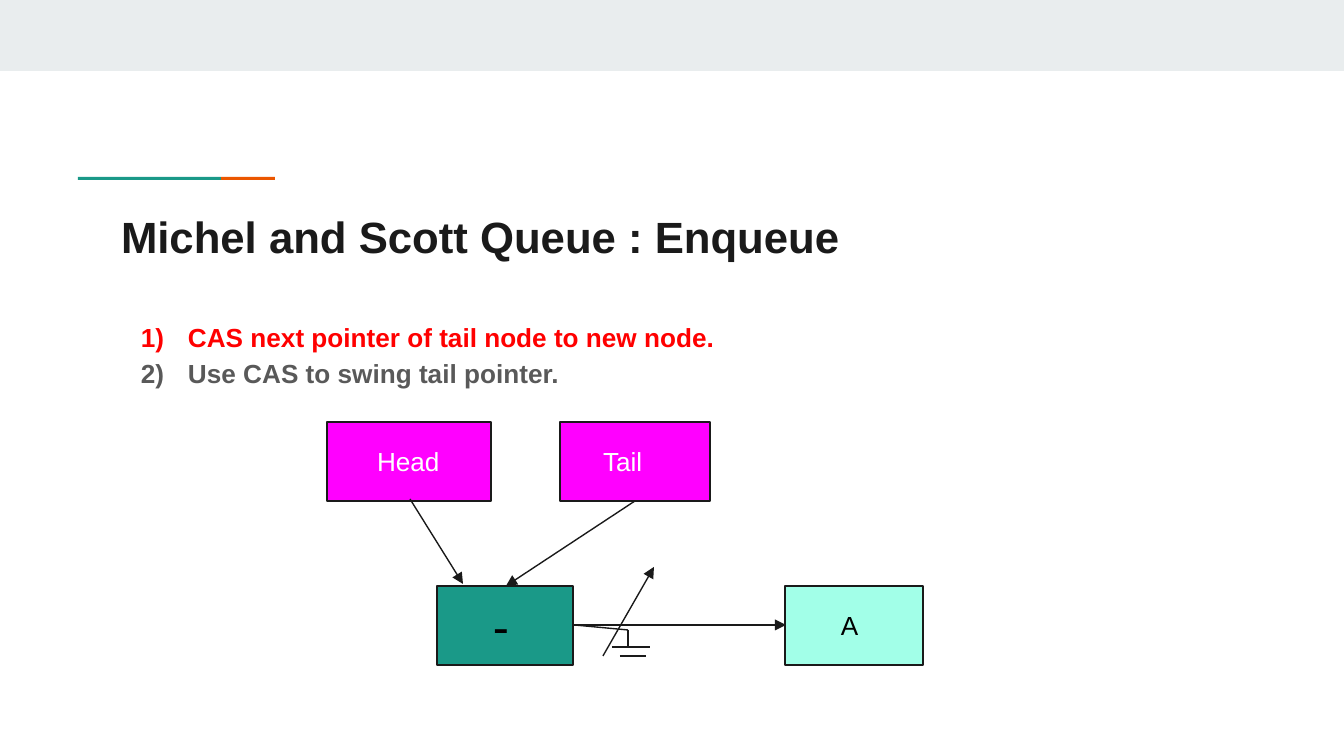
import pptx
import pptx.dml.color
import pptx.enum.shapes
import pptx.enum.text
import pptx.oxml
import pptx.oxml.ns
import pptx.util
from lxml import etree

PX = 914400 / 134.4
FONT = "Arial"
INK, TEAL, ORANGE, MAGENTA = "1A1A1A", "1A9988", "EB5600", "FF00FF"
INSET = 13
NODE_H = 79
POINTER_Y, NODE_Y = 422, 586


def px(n):
    return round(n * PX)


def color(hex_value):
    return pptx.dml.color.RGBColor.from_string(hex_value)


def sub(parent, tag, **attrs):
    return etree.SubElement(parent, pptx.oxml.ns.qn(tag), attrs)


def set_font(p, size, hex_value, bold=False):
    p.font.name = FONT
    p.font.size = pptx.util.Pt(size)
    p.font.bold = bold
    p.font.color.rgb = color(hex_value)


def set_frame(tf, anchor, left=INSET):
    tf.word_wrap = True
    tf.auto_size = pptx.enum.text.MSO_AUTO_SIZE.NONE
    tf.vertical_anchor = anchor
    tf.margin_left = px(left)
    tf.margin_top = tf.margin_right = tf.margin_bottom = px(INSET)


def add_rect(s, x, y, w, h, fill, line=None):
    sp = s.shapes.add_shape(pptx.enum.shapes.MSO_SHAPE.RECTANGLE,
                            px(x), px(y), px(w), px(h))
    sp.shadow.inherit = False
    sp.fill.solid()
    sp.fill.fore_color.rgb = color(fill)
    if line:
        sp.line.color.rgb = color(line)
        sp.line.width = pptx.util.Pt(0.75)
    else:
        sp.line.fill.background()
    return sp


def add_node(s, text, x, y, w, fill, text_color, indent, size=14):
    tf = add_rect(s, x, y, w, NODE_H, fill, INK).text_frame
    set_frame(tf, pptx.enum.text.MSO_ANCHOR.MIDDLE, indent)
    p = tf.paragraphs[0]
    p.text = text
    p.alignment = pptx.enum.text.PP_ALIGN.LEFT
    set_font(p, size, text_color)


def add_line(s, x1, y1, x2, y2, arrow=False):
    cn = s.shapes.add_connector(pptx.enum.shapes.MSO_CONNECTOR.STRAIGHT,
                                px(x1), px(y1), px(x2), px(y2))
    cn.line.color.rgb = color(INK)
    cn.line.width = pptx.util.Pt(0.75)
    if arrow:
        sub(cn.line._get_or_add_ln(), "a:tailEnd", type="triangle")
    sub(cn._element.spPr, "a:effectLst")


def set_title(s, text):
    sp = s.shapes.title
    sp.left, sp.top, sp.width, sp.height = px(108), px(197), px(1130), px(79)
    set_frame(sp.text_frame, pptx.enum.text.MSO_ANCHOR.MIDDLE)
    p = sp.text_frame.paragraphs[0]
    p.text = text
    p.alignment = pptx.enum.text.PP_ALIGN.LEFT
    set_font(p, 23.4, INK, bold=True)


def add_steps(s, steps):
    tf = s.shapes.add_textbox(px(108), px(304), px(1130), px(406)).text_frame
    set_frame(tf, pptx.enum.text.MSO_ANCHOR.TOP)
    for i, (text, hex_value) in enumerate(steps):
        p = tf.add_paragraph() if i else tf.paragraphs[0]
        p.text = text
        p.line_spacing = 1.15
        # Numbering with a hanging indent
        pPr = p._p.get_or_add_pPr()
        pPr.set("marL", str(px(67)))
        pPr.set("indent", str(px(-47)))
        sub(sub(pPr, "a:buClr"), "a:srgbClr", val=hex_value)
        sub(pPr, "a:buAutoNum", type="arabicParenR")
        set_font(p, 14, hex_value, bold=True)


def main():
    prs = pptx.Presentation()
    prs.slide_width, prs.slide_height = px(1344), px(756)
    s = prs.slides.add_slide(prs.slide_layouts[5])

    # Top band and accent rule
    add_rect(s, 0, 0, 1344, 71, "E9EDEE")
    add_rect(s, 78, 177, 143, 3, TEAL)
    add_rect(s, 221, 177, 54, 3, ORANGE)

    # Title and steps
    set_title(s, "Michel and Scott Queue : Enqueue")
    add_steps(s, [("CAS next pointer of tail node to new node.", "FF0000"),
                  ("Use CAS to swing tail pointer.", "595959")])

    # Queue pointers and nodes
    add_node(s, "Head", 327, POINTER_Y, 164, MAGENTA, "FFFFFF", 50)
    add_node(s, "Tail", 560, POINTER_Y, 150, MAGENTA, "FFFFFF", 43)
    add_node(s, "-", 437, NODE_Y, 136, TEAL, "000000", 56, size=26)
    add_node(s, "A", 785, NODE_Y, 138, "A2FFE8", "000000", 56)

    # Head, tail and next pointers, and the stroke that cancels the null link
    for ends in [(410, 499, 463, 584), (635, 501, 506, 586),
                 (574, 625, 786, 625), (603, 656, 654, 567)]:
        add_line(s, *ends, arrow=True)

    # Null (ground) symbol
    for ends in [(574, 625, 628, 630), (628, 630, 628, 647),
                 (612, 647, 650, 647), (620, 656, 646, 656)]:
        add_line(s, *ends)

    prs.save("out.pptx")


if __name__ == "__main__":
    main()
